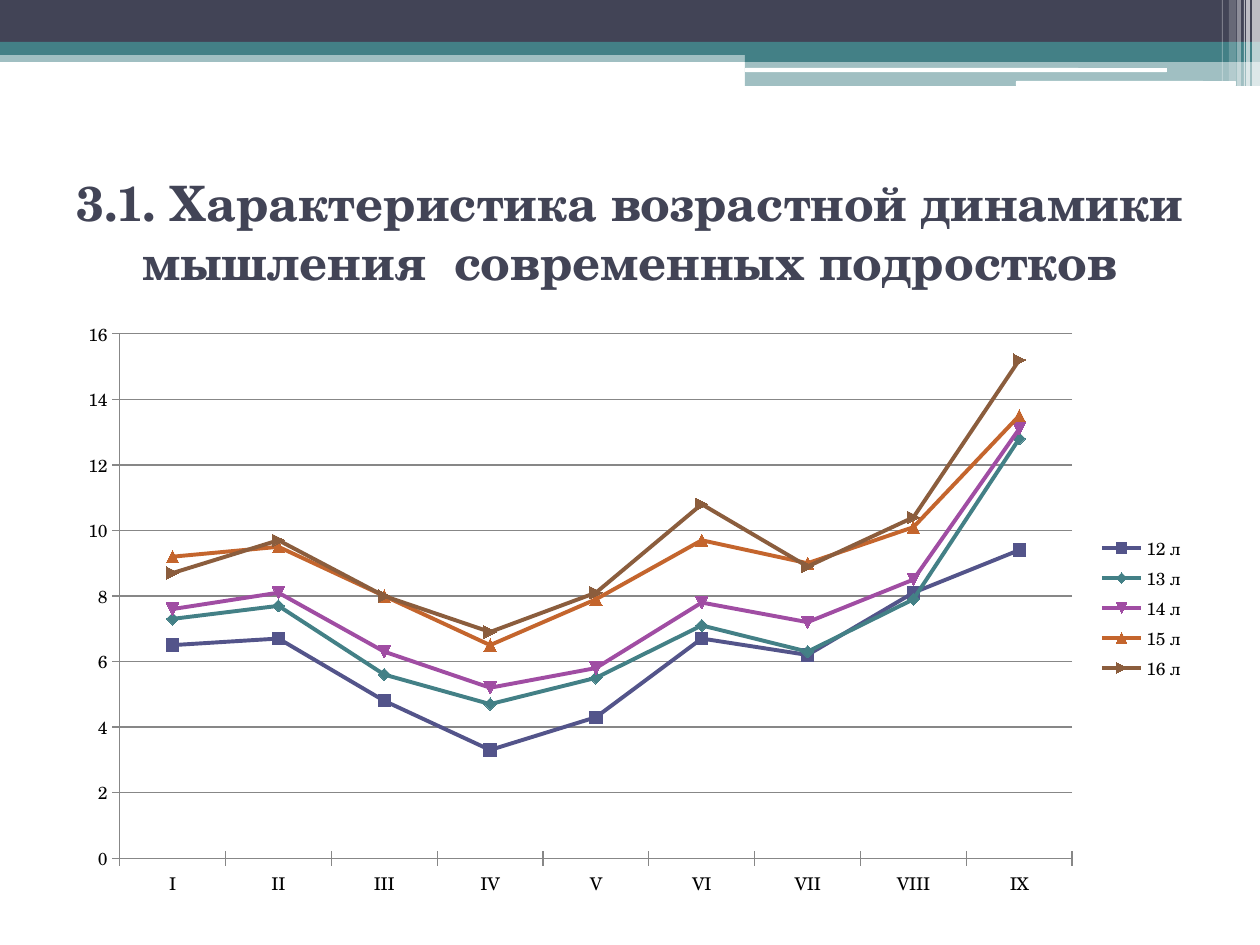
from lxml import etree
from pptx import Presentation
from pptx.chart.data import CategoryChartData
from pptx.dml.color import RGBColor
from pptx.enum.chart import XL_CHART_TYPE, XL_LEGEND_POSITION, XL_TICK_MARK
from pptx.enum.shapes import MSO_SHAPE
from pptx.enum.text import MSO_ANCHOR, PP_ALIGN
from pptx.oxml import parse_xml
from pptx.oxml.ns import nsdecls, qn
from pptx.util import Pt

PX = 914400 / 126
FONT = "TeX Gyre Schola"
WHITE = RGBColor(0xFF, 0xFF, 0xFF)
BLACK = RGBColor(0, 0, 0)
NAVY = RGBColor(0x42, 0x44, 0x56)
TEAL = RGBColor(0x43, 0x80, 0x86)
GRAY = RGBColor(0x87, 0x87, 0x87)

TITLE = "3.1. Характеристика возрастной динамики мышления  современных подростков"
RECT, ROUND = MSO_SHAPE.RECTANGLE, MSO_SHAPE.ROUNDED_RECTANGLE

# Header bands: kind, left, top, width, height, colour, opacity in percent
BANDS = [
    (RECT, 0, 50, 1260, 12, TEAL, 50),
    (RECT, 0, 0, 1260, 43, NAVY, 100),
    (RECT, 0, 42, 1260, 13, TEAL, 100),
    (RECT, 745, 49, 515, 13, TEAL, 100),
    (RECT, 745, 61, 515, 25, TEAL, 50),
    (ROUND, 745, 68, 422, 4, WHITE, 100),
    (ROUND, 1016, 81, 220, 5, WHITE, 100),
]
# White stripes at the right edge: left, width, height, opacity in percent
STRIPES = [
    (1252, 8, 86, 65),
    (1246, 4, 86, 65),
    (1244, 1, 86, 60),
    (1237, 4, 86, 40),
    (1229, 7, 81, 20),
    (1222, 1, 81, 30),
]
BANDS += [(RECT, x, 0, w, h, WHITE, a) for x, w, h, a in STRIPES]

CATS = ["I", "II", "III", "IV", "V", "VI", "VII", "VIII", "IX"]
SERIES = [
    ("12 л", RGBColor(0x53, 0x54, 0x8A), [6.5, 6.7, 4.8, 3.3, 4.3, 6.7, 6.2, 8.1, 9.4]),
    ("13 л", TEAL, [7.3, 7.7, 5.6, 4.7, 5.5, 7.1, 6.3, 7.9, 12.8]),
    ("14 л", RGBColor(0xA0, 0x4D, 0xA3), [7.6, 8.1, 6.3, 5.2, 5.8, 7.8, 7.2, 8.5, 13.1]),
    ("15 л", RGBColor(0xC4, 0x65, 0x2D), [9.2, 9.5, 8, 6.5, 7.9, 9.7, 9, 10.1, 13.5]),
    ("16 л", RGBColor(0x8B, 0x5D, 0x3D), [8.7, 9.7, 8, 6.9, 8.1, 10.8, 8.9, 10.4, 15.2]),
]
AREA = (63, 310, 1134, 596)
PLOT = {"x": 0.05, "y": 0.04, "w": 0.84, "h": 0.88}


def box(*sides):
    return [round(side * PX) for side in sides]


def add_band(slide, kind, x, y, w, h, color, alpha):
    band = slide.shapes.add_shape(kind, *box(x, y, w, h))
    band.shadow.inherit = False
    band.line.fill.background()
    band.fill.solid()
    band.fill.fore_color.rgb = color
    if alpha < 100:
        tint = band.fill._xPr.find(qn("a:solidFill"))[0]
        etree.SubElement(tint, qn("a:alpha")).set("val", str(alpha * 1000))


def add_title(slide):
    frame = slide.shapes.add_textbox(*box(63, 158, 1134, 147)).text_frame
    frame.word_wrap = True
    frame.vertical_anchor = MSO_ANCHOR.MIDDLE
    frame.text = TITLE
    para = frame.paragraphs[0]
    para.alignment = PP_ALIGN.CENTER
    font = para.runs[0].font
    font.name, font.size, font.bold = FONT, Pt(27.9), True
    font.color.rgb = NAVY


def paint(line, color, width):
    line.color.rgb = color
    line.width = Pt(width)


def add_graph(slide):
    data = CategoryChartData()
    data.categories = CATS
    for name, _, vals in SERIES:
        data.add_series(name, vals)
    chart = slide.shapes.add_chart(XL_CHART_TYPE.LINE_MARKERS, *box(*AREA), data).chart
    chart.has_title = False
    chart.font.name, chart.font.size = FONT, Pt(10)
    chart.font.color.rgb = BLACK
    chart.has_legend = True
    chart.legend.position = XL_LEGEND_POSITION.RIGHT
    chart.legend.include_in_layout = False

    # Axes and grid
    for axis in (chart.category_axis, chart.value_axis):
        axis.major_tick_mark = XL_TICK_MARK.CROSS
        paint(axis.format.line, GRAY, 0.75)
    scale = chart.value_axis
    scale.minimum_scale, scale.maximum_scale, scale.major_unit = 0, 16, 2
    scale.has_major_gridlines = True
    paint(scale.major_gridlines.format.line, GRAY, 0.75)

    # Lines and markers
    plot = chart.plots[0]
    plot.vary_by_categories = False
    for line, (_, color, _) in zip(plot.series, SERIES):
        line.smooth = False
        paint(line.format.line, color, 2.25)
        mark = line.marker
        mark.size = 7
        mark.format.fill.solid()
        mark.format.fill.fore_color.rgb = color
        paint(mark.format.line, color, 0.75)

    # Fixed inner plot area
    modes = "".join(f'<c:{k}Mode val="edge"/>' for k in "xy")
    sizes = "".join(f'<c:{k} val="{v}"/>' for k, v in PLOT.items())
    layout = parse_xml(
        f'<c:layout {nsdecls("c")}><c:manualLayout><c:layoutTarget val="inner"/>'
        f"{modes}{sizes}</c:manualLayout></c:layout>")
    area = chart._chartSpace.chart.plotArea
    old = area.find(qn("c:layout"))
    if old is not None:
        area.remove(old)
    area.insert(0, layout)


def main():
    deck = Presentation()
    deck.slide_width, deck.slide_height = box(1260, 945)
    slide = deck.slides.add_slide(deck.slide_layouts[6])
    for band in BANDS:
        add_band(slide, *band)
    add_title(slide)
    add_graph(slide)
    deck.save("out.pptx")


if __name__ == "__main__":
    main()
